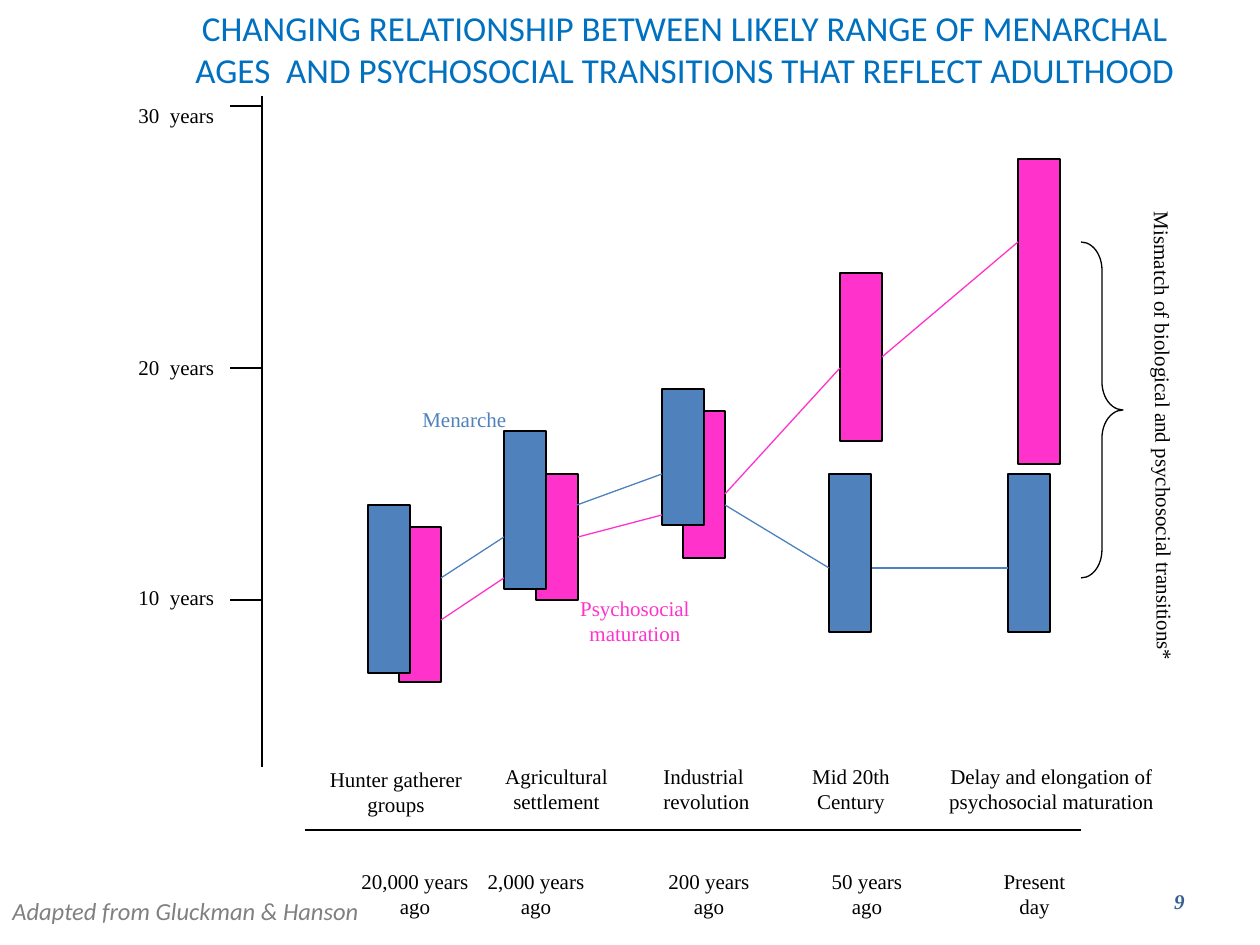
from lxml.etree import SubElement
from pptx import Presentation
from pptx.dml.color import RGBColor
from pptx.enum.shapes import MSO_CONNECTOR, MSO_SHAPE
from pptx.enum.text import MSO_ANCHOR, PP_ALIGN
from pptx.oxml.ns import qn
from pptx.util import Emu, Pt

PX = 914400 // 126
SERIF, SANS = "Times New Roman", "Calibri"
BLACK, BLUE, PINK = "000000", "4F81BD", "FF33CC"
LEFT, CENTER, RIGHT = PP_ALIGN.LEFT, PP_ALIGN.CENTER, PP_ALIGN.RIGHT
BAR_WIDTH, AXIS_X, TICK = 42, 262, 32
LABEL_HEIGHT, AGE_LABEL_HEIGHT, ERA_TOP, DATE_TOP = 63, 38, 757, 862

TITLE = ("CHANGING RELATIONSHIP BETWEEN LIKELY RANGE OF MENARCHAL AGES  AND "
         "PSYCHOSOCIAL TRANSITIONS THAT REFLECT ADULTHOOD")
# label, tick y, label top
AGES = [("10  years", 600, 578), ("20  years", 368, 348), ("30  years", 106, 96)]
# era, colour, left, top, height, from back to front
BARS = [
    ("hunter", PINK, 399, 527, 155), ("hunter", BLUE, 368, 505, 168),
    ("farming", PINK, 536, 474, 126), ("farming", BLUE, 504, 431, 158),
    ("industry", PINK, 683, 411, 147), ("industry", BLUE, 662, 389, 136),
    ("mid-century", PINK, 840, 273, 168), ("mid-century", BLUE, 829, 474, 158),
    ("present", BLUE, 1008, 474, 158), ("present", PINK, 1018, 159, 305),
]
# colour, start, end, era of the bar whose right side it starts from
TRENDS = [
    (PINK, (441, 620), (504, 578), None), (BLUE, (441, 578), (504, 537), None),
    (BLUE, (577, 505), (662, 474), None), (PINK, (577, 537), (662, 515), "farming"),
    (PINK, (725, 494), (840, 368), None), (BLUE, (725, 505), (829, 568), None),
    (BLUE, (872, 568), (1008, 568), None), (PINK, (882, 358), (1018, 242), "mid-century"),
]
# paragraphs, left, top, width, alignment, wrap
ERAS = [
    (["Hunter gatherer", "groups"], 314, ERA_TOP + 3, 164, CENTER, True),
    (["Agricultural settlement"], 483, ERA_TOP, 147, CENTER, True),
    (["Industrial revolution"], 651, ERA_TOP, 126, LEFT, True),
    (["Mid 20th Century"], 788, ERA_TOP, 126, CENTER, True),
    (["Delay and elongation of", "psychosocial maturation"], 935, ERA_TOP, 233, CENTER, False),
]
# text, left, width
DATES = [("20,000 years ago", 347, 136), ("2,000 years ago", 473, 126),
         ("200 years ago", 651, 116), ("50 years ago", 809, 116), ("Present day", 987, 95)]

prs = Presentation()
prs.slide_width, prs.slide_height = Emu(1260 * PX), Emu(945 * PX)
slide = prs.slides.add_slide(prs.slide_layouts[6])


def px(*lengths):
    return [Emu(length * PX) for length in lengths]


def rgb(color):
    return RGBColor.from_string(color)


def add_text(paragraphs, box, color=BLACK, size=12, font=SERIF, align=LEFT,
             wrap=True, bold=False, italic=False):
    label = slide.shapes.add_textbox(*px(*box))
    frame = label.text_frame
    frame.word_wrap = wrap
    for i, words in enumerate(paragraphs):
        para = frame.paragraphs[0] if i == 0 else frame.add_paragraph()
        para.alignment = align
        run = para.add_run()
        run.text = words
        run.font.name, run.font.size = font, Pt(size)
        run.font.bold, run.font.italic = bold, italic
        run.font.color.rgb = rgb(color)
    return label


def add_line(start, end, color=BLACK):
    line = slide.shapes.add_connector(MSO_CONNECTOR.STRAIGHT, *px(*start, *end))
    line.line.color.rgb, line.line.width = rgb(color), Pt(0.75)
    SubElement(line._element.spPr, qn("a:effectLst"))
    return line


def add_outlined(kind, box, fill=None):
    shape = slide.shapes.add_shape(kind, *px(*box))
    shape.shadow.inherit = False
    if fill:
        shape.fill.solid()
        shape.fill.fore_color.rgb = rgb(fill)
    else:
        shape.fill.background()
    shape.line.color.rgb, shape.line.width = rgb(BLACK), Pt(0.75)
    return shape


add_line((AXIS_X, 96), (AXIS_X, 767))
add_line((305, 830), (1081, 830))
for age, tick_y, label_top in AGES:
    add_line((AXIS_X, tick_y), (AXIS_X - TICK, tick_y))
    add_text([age], (126, label_top, 105, AGE_LABEL_HEIGHT))

bars = {(era, color): add_outlined(MSO_SHAPE.RECTANGLE, (left, top, BAR_WIDTH, height), color)
        for era, color, left, top, height in BARS}
for color, start, end, joined_era in TRENDS:
    trend = add_line(start, end, color)
    if joined_era:
        trend.begin_connect(bars[joined_era, color], 3)

for paragraphs, left, top, width, align, wrap in ERAS:
    add_text(paragraphs, (left, top, width, LABEL_HEIGHT), align=align, wrap=wrap)
for date, left, width in DATES:
    add_text([date], (left, DATE_TOP, width, LABEL_HEIGHT), align=CENTER)

add_text(["Menarche"], (410, 400, 136, 38), BLUE)
add_text(["Psychosocial maturation"], (567, 589, 136, LABEL_HEIGHT), PINK, align=CENTER)

brace = add_outlined(MSO_SHAPE.RIGHT_BRACE, (1081, 242, 42, 336))
brace.adjustments[0], brace.adjustments[1] = 0.67, 0.5
mismatch = add_text(["Mismatch of biological and psychosocial transitions*"],
                    (926, 418, 475, 38), wrap=False)
mismatch.rotation = 89.6

add_text([TITLE], (174, 0, 1022, 140), "0070C0", 20, SANS, CENTER)
add_text(["Adapted from Gluckman & Hanson"], (0, 890, 381, 43), "808080", 14, SANS,
         wrap=False, italic=True)
page_number = add_text(["9"], (903, 876, 294, 50), "376092", align=RIGHT, bold=True, italic=True)
page_number.text_frame.vertical_anchor = MSO_ANCHOR.MIDDLE

prs.save("out.pptx")
